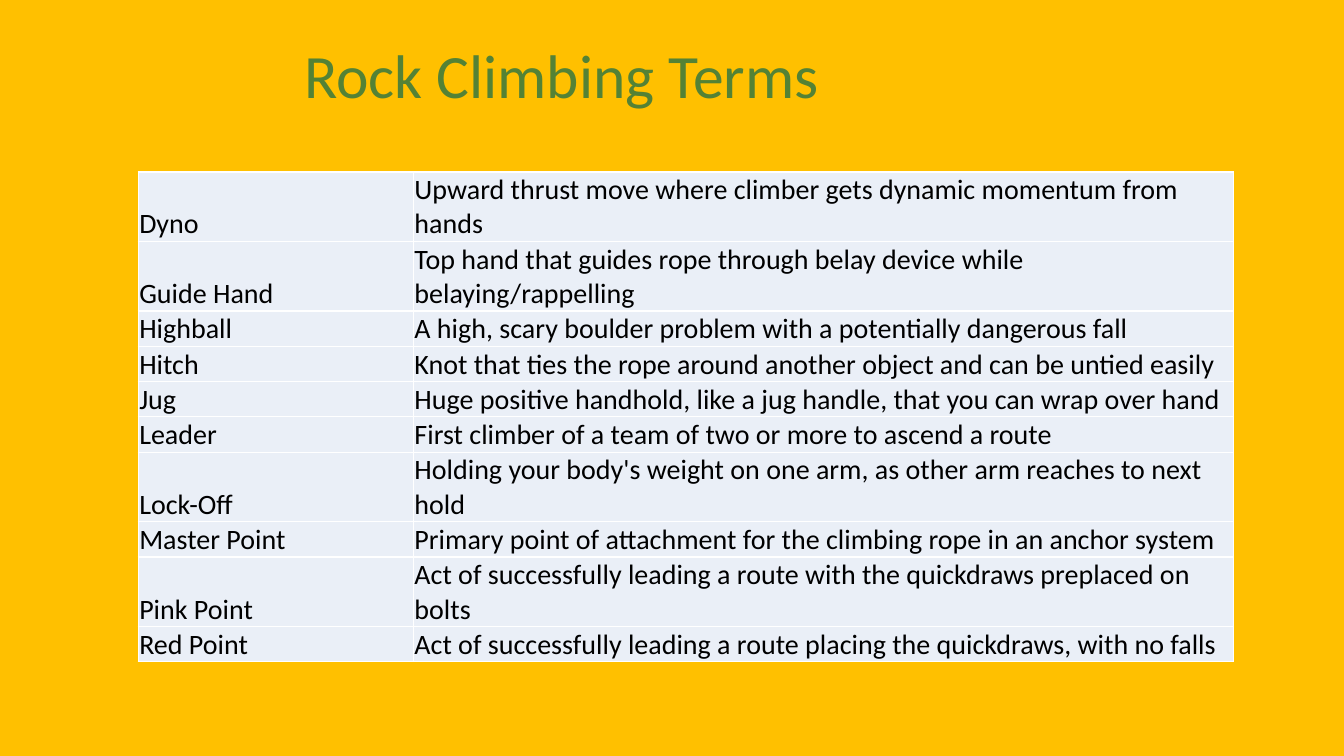
from lxml import etree
from pptx import Presentation
from pptx.dml.color import RGBColor
from pptx.enum import text
from pptx.oxml.ns import qn
from pptx.util import Pt

HEADING = "Rock Climbing Terms"
TERMS = [
    ("Dyno", "Upward thrust move where climber gets dynamic momentum from hands"),
    ("Guide Hand", "Top hand that guides rope through belay device while belaying/rappelling"),
    ("Highball", "A high, scary boulder problem with a potentially dangerous fall"),
    ("Hitch", "Knot that ties the rope around another object and can be untied easily"),
    ("Jug", "Huge positive handhold, like a jug handle, that you can wrap over hand"),
    ("Leader", "First climber of a team of two or more to ascend a route"),
    ("Lock-Off", "Holding your body's weight on one arm, as other arm reaches to next hold"),
    ("Master Point", "Primary point of attachment for the climbing rope in an anchor system"),
    ("Pink Point", "Act of successfully leading a route with the quickdraws preplaced on bolts"),
    ("Red Point", "Act of successfully leading a route placing the quickdraws, with no falls"),
]
FONT = "Calibri"
YELLOW, GREEN, PALE_BLUE, WHITE, BLACK = "FFC000", "548235", "EAEFF7", "FFFFFF", "000000"
COLUMN_WIDTHS = (196.6, 586)
ROW_HEIGHTS = [23.7] * 5 + [21] * 5
TABLE_LEFT, TABLE_TOP, TABLE_HEIGHT = 98.8, 122.8, 342
INSET = 0.7


def paint(fill, color):
    fill.solid()
    fill.fore_color.rgb = RGBColor.from_string(color)


def style_text(frame, size, color):
    for paragraph in frame.paragraphs:
        paragraph.alignment = text.PP_ALIGN.LEFT
        for run in paragraph.runs:
            run.font.name = FONT
            run.font.size = Pt(size)
            run.font.color.rgb = RGBColor.from_string(color)


def add_borders(cell, color, width):
    """Line all four sides; the lines must come before the fill in the XML."""
    properties = cell._tc.get_or_add_tcPr()
    for position, side in enumerate(("a:lnL", "a:lnR", "a:lnT", "a:lnB")):
        line = etree.Element(qn(side), w=str(Pt(width)))
        solid = etree.SubElement(line, qn("a:solidFill"))
        etree.SubElement(solid, qn("a:srgbClr"), val=color)
        properties.insert(position, line)


def add_heading(slide):
    heading = slide.shapes.title
    heading.left, heading.top = Pt(66), Pt(28.8)
    heading.width, heading.height = Pt(828), Pt(104.4)
    frame = heading.text_frame
    frame.text = HEADING
    frame.auto_size = text.MSO_AUTO_SIZE.NONE
    frame.vertical_anchor = text.MSO_ANCHOR.TOP
    frame.margin_left = Pt(151.2)
    frame.paragraphs[0].line_spacing = 0.9
    style_text(frame, 44, GREEN)


def add_terms(slide):
    frame = slide.shapes.add_table(
        len(TERMS), len(COLUMN_WIDTHS), Pt(TABLE_LEFT), Pt(TABLE_TOP),
        Pt(sum(COLUMN_WIDTHS)), Pt(TABLE_HEIGHT))
    table = frame.table
    table.first_row = table.horz_banding = False
    for column, width in zip(table.columns, COLUMN_WIDTHS):
        column.width = Pt(width)
    for row, height, entry in zip(table.rows, ROW_HEIGHTS, TERMS):
        row.height = Pt(height)
        for cell, wording in zip(row.cells, entry):
            cell.text_frame.text = wording
            cell.vertical_anchor = text.MSO_ANCHOR.BOTTOM
            cell.margin_left = cell.margin_top = cell.margin_right = Pt(INSET)
            cell.margin_bottom = 0
            style_text(cell.text_frame, 20, BLACK)
            paint(cell.fill, PALE_BLUE)
            add_borders(cell, WHITE, 1)
    frame.height = Pt(TABLE_HEIGHT)


def main():
    deck = Presentation()
    deck.slide_width, deck.slide_height = Pt(960), Pt(540)
    slide = deck.slides.add_slide(deck.slide_layouts[5])
    paint(slide.background.fill, YELLOW)
    add_terms(slide)
    add_heading(slide)
    deck.save("out.pptx")


if __name__ == "__main__":
    main()
